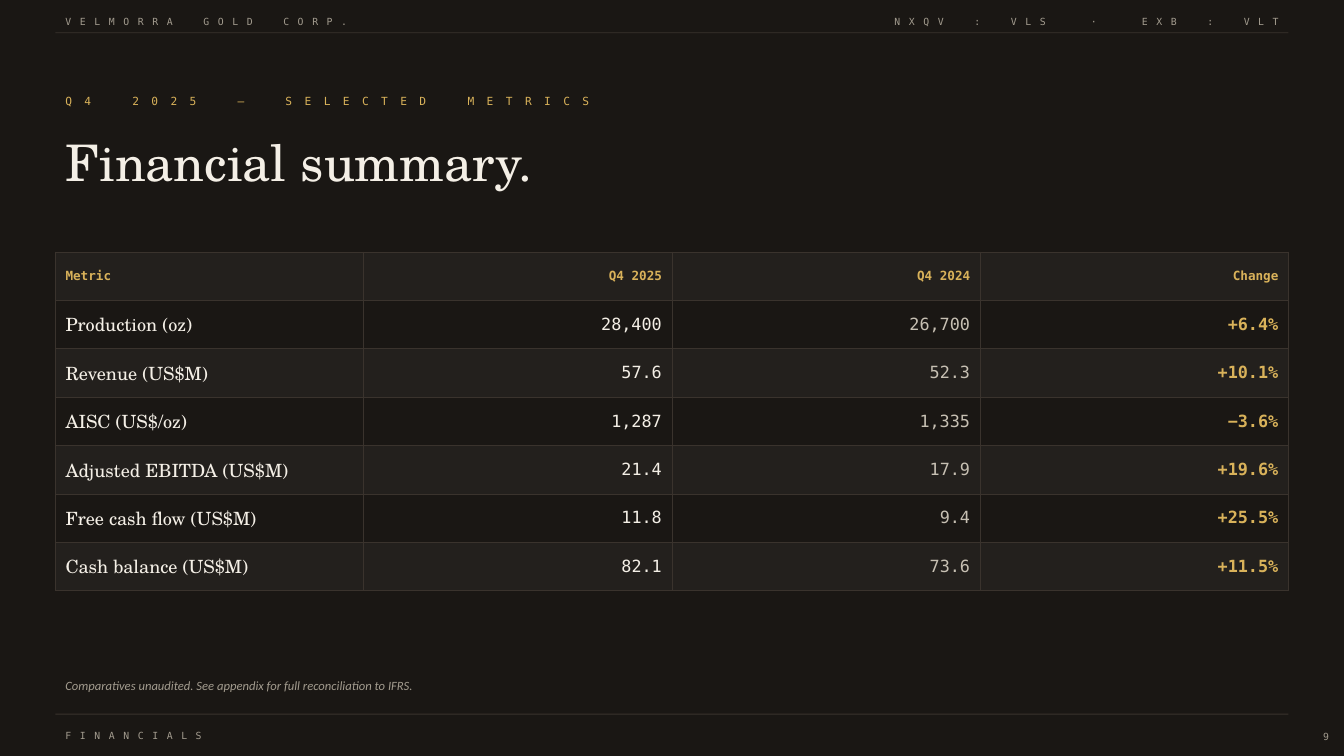
"""Build the quarterly financial summary slide."""
import dataclasses
import typing

import lxml.etree
import pptx
import pptx.dml.color
import pptx.enum.shapes
import pptx.enum.text
import pptx.oxml.ns
import pptx.slide
import pptx.table
import pptx.text.text
import pptx.util

COLOURS = {
    "ground": "1A1714",
    "band": "23201D",
    "rule": "3A332D",
    "muted": "A39C8F",
    "gold": "D9B25A",
    "cream": "F4EFE6",
    "prior": "C7C0B3",
}
MONO, SERIF, SANS = "DejaVu Sans Mono", "TeX Gyre Schola", "Calibri"
MONO_ADVANCE = 0.602
LEFT, RIGHT = pptx.enum.text.PP_ALIGN.LEFT, pptx.enum.text.PP_ALIGN.RIGHT
TOP, MIDDLE = pptx.enum.text.MSO_ANCHOR.TOP, pptx.enum.text.MSO_ANCHOR.MIDDLE

GRID = pptx.util.Inches(0.05)
COLUMNS, ROWS = 266.66, 150
MARGIN = 11
CONTENT = COLUMNS - 2 * MARGIN
CONTENT_END = COLUMNS - MARGIN
HALF = 120
RULE_HEIGHT = 0.2
TABLE_TOP, TABLE_ROW = 50, 9.6


@dataclasses.dataclass(frozen=True)
class Area:
    column: float
    row: float
    columns: float
    rows: float

    def lengths(self) -> typing.List[int]:
        return [grid(n) for n in (self.column, self.row, self.columns, self.rows)]


@dataclasses.dataclass(frozen=True)
class Style:
    font: str
    size: float
    colour: str
    bold: bool = False
    italic: bool = False
    align: pptx.enum.text.PP_ALIGN = LEFT
    tracking: float = 0


@dataclasses.dataclass(frozen=True)
class Caption:
    text: str
    area: Area
    style: Style
    anchor: pptx.enum.text.MSO_ANCHOR = MIDDLE


RUNNING = Style(MONO, 7, "muted", tracking=1)
RUNNING_END = dataclasses.replace(RUNNING, align=RIGHT)
PAGE_NUMBER = dataclasses.replace(RUNNING_END, tracking=0)
KICKER = Style(MONO, 8, "gold", tracking=2)
HEADLINE = Style(SERIF, 36, "cream")
FOOTNOTE = Style(SANS, 9, "muted", italic=True)
HEADING = Style(MONO, 9, "gold", bold=True)
HEADING_END = dataclasses.replace(HEADING, align=RIGHT)
METRIC = Style(SERIF, 13, "cream")
CURRENT = Style(MONO, 12, "cream", align=RIGHT)
PRIOR = dataclasses.replace(CURRENT, colour="prior")
CHANGE = dataclasses.replace(CURRENT, colour="gold", bold=True)

HEADLINE_AREA = Area(MARGIN, 23, 200, 18)
RULES = [Area(MARGIN, row, CONTENT, RULE_HEIGHT) for row in (6.4, 141.6)]
CAPTIONS = [
    Caption("VELMORRA GOLD CORP.", Area(MARGIN, 2, HALF, 4.4), RUNNING),
    Caption("NXQV : VLS · EXB : VLT", Area(CONTENT_END - HALF, 2, HALF, 4.4), RUNNING_END),
    Caption("FINANCIALS", Area(MARGIN, 144, HALF, 4), RUNNING),
    Caption("Q4 2025 — SELECTED METRICS", Area(MARGIN, 17, 140, 6), KICKER),
    Caption("Comparatives unaudited. See appendix for full reconciliation to IFRS.",
            Area(MARGIN, 133, 180, 6), FOOTNOTE),
    Caption("9", Area(CONTENT_END, 144, 10, 4), PAGE_NUMBER, TOP),
]
METRICS = [
    ("Metric", "Q4 2025", "Q4 2024", "Change"),
    ("Production (oz)", "28,400", "26,700", "+6.4%"),
    ("Revenue (US$M)", "57.6", "52.3", "+10.1%"),
    ("AISC (US$/oz)", "1,287", "1,335", "−3.6%"),
    ("Adjusted EBITDA (US$M)", "21.4", "17.9", "+19.6%"),
    ("Free cash flow (US$M)", "11.8", "9.4", "+25.5%"),
    ("Cash balance (US$M)", "82.1", "73.6", "+11.5%"),
]


def grid(units: float) -> int:
    return round(units * GRID)


def rgb(name: str) -> pptx.dml.color.RGBColor:
    return pptx.dml.color.RGBColor.from_string(COLOURS[name])


def apply_format(target: typing.Any, values: typing.Dict[str, typing.Any]) -> None:
    for attribute, value in values.items():
        setattr(target, attribute, value)


def add_run(paragraph: pptx.text.text._Paragraph, text: str, style: Style,
            tracking: float) -> None:
    run = paragraph.add_run()
    run.text = text
    apply_format(run.font, {
        "name": style.font,
        "size": pptx.util.Pt(style.size),
        "bold": style.bold,
        "italic": style.italic,
    })
    run.font.color.rgb = rgb(style.colour)
    if tracking:
        run._r.get_or_add_rPr().set("spc", str(round(tracking * 100)))


def write(frame: pptx.text.text.TextFrame, text: str, style: Style) -> None:
    paragraph = frame.paragraphs[0]
    paragraph.alignment = style.align
    if not style.tracking:
        add_run(paragraph, text, style, 0)
        return
    words = text.split()
    advance = MONO_ADVANCE * style.size + style.tracking
    for index, word in enumerate(words):
        if index:
            spaces = 6 if "·" in (word, words[index - 1]) else 4
            add_run(paragraph, " ", style, style.tracking + (spaces - 1) * advance)
        add_run(paragraph, " ".join(word), style, style.tracking)


def draw_rule(slide: pptx.slide.Slide, area: Area) -> None:
    rule = slide.shapes.add_shape(pptx.enum.shapes.MSO_SHAPE.RECTANGLE, *area.lengths())
    rule.shadow.inherit = False
    rule.fill.solid()
    rule.fill.fore_color.rgb = rgb("rule")
    rule.line.fill.background()


def draw_caption(slide: pptx.slide.Slide, caption: Caption) -> None:
    frame = slide.shapes.add_textbox(*caption.area.lengths()).text_frame
    apply_format(frame, {"word_wrap": True, "vertical_anchor": caption.anchor})
    write(frame, caption.text, caption.style)


def draw_headline(slide: pptx.slide.Slide) -> None:
    headline = slide.shapes.title
    apply_format(headline, dict(zip(("left", "top", "width", "height"), HEADLINE_AREA.lengths())))
    apply_format(headline.text_frame, {
        "word_wrap": True,
        "vertical_anchor": MIDDLE,
        "auto_size": pptx.enum.text.MSO_AUTO_SIZE.NONE,
    })
    write(headline.text_frame, "Financial summary.", HEADLINE)


def outline(cell: pptx.table._Cell) -> None:
    qn = pptx.oxml.ns.qn
    properties = cell._tc.get_or_add_tcPr()
    for side in ("a:lnL", "a:lnR", "a:lnT", "a:lnB"):
        edge = lxml.etree.SubElement(properties, qn(side), w=str(pptx.util.Pt(0.5)))
        fill = lxml.etree.SubElement(edge, qn("a:solidFill"))
        lxml.etree.SubElement(fill, qn("a:srgbClr"), val=COLOURS["rule"])


def draw_metrics(slide: pptx.slide.Slide) -> None:
    area = Area(MARGIN, TABLE_TOP, CONTENT, TABLE_ROW * len(METRICS))
    metrics = slide.shapes.add_table(len(METRICS), len(METRICS[0]), *area.lengths()).table
    apply_format(metrics, {"first_row": False, "horz_banding": False})
    for index, values in enumerate(METRICS):
        metrics.rows[index].height = grid(TABLE_ROW)
        styles = (METRIC, CURRENT, PRIOR, CHANGE) if index else (HEADING,) + (HEADING_END,) * 3
        for cell, value, style in zip(metrics.rows[index].cells, values, styles):
            outline(cell)
            cell.fill.solid()
            cell.fill.fore_color.rgb = rgb("ground" if index % 2 else "band")
            cell.vertical_anchor = MIDDLE
            write(cell.text_frame, value, style)


def main() -> None:
    deck = pptx.Presentation()
    apply_format(deck, {"slide_width": grid(COLUMNS), "slide_height": grid(ROWS)})
    slide = deck.slides.add_slide(deck.slide_layouts.get_by_name("Title Only"))
    slide.background.fill.solid()
    slide.background.fill.fore_color.rgb = rgb("ground")
    for area in RULES:
        draw_rule(slide, area)
    for caption in CAPTIONS:
        draw_caption(slide, caption)
    draw_headline(slide)
    draw_metrics(slide)
    deck.save("out.pptx")


if __name__ == "__main__":
    main()
